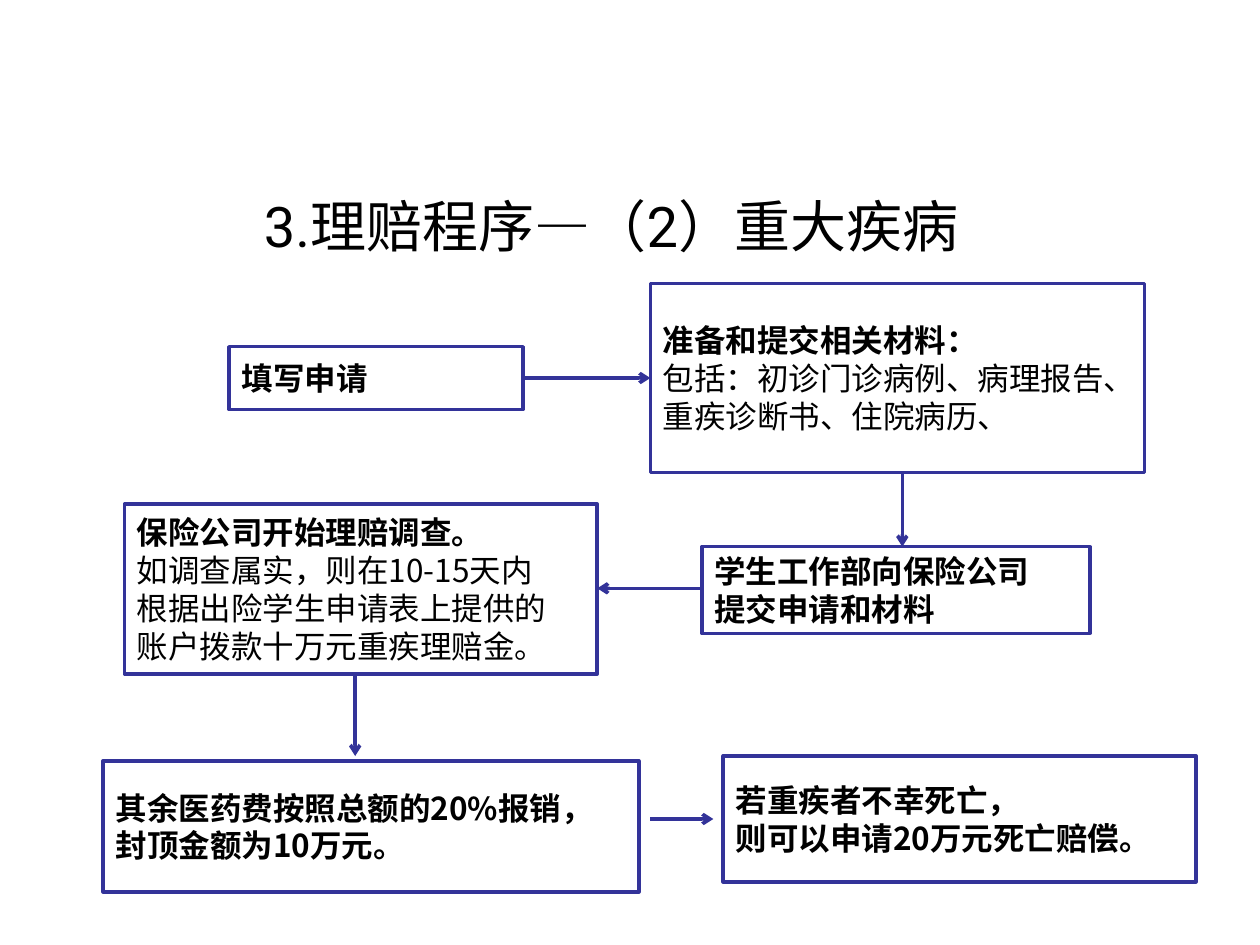
"""Build the slide on the claim procedure for serious illness."""
import pptx
import pptx.dml.color
import pptx.enum.shapes
import pptx.enum.text
import pptx.oxml
import pptx.oxml.ns
import pptx.util
from pptx.util import Cm

COLOURS = {"paper": "FFFFFF", "frame": "333399", "ink": "000000"}
TITLE_FONT = "Roboto"
STEP_FONT = "Noto Sans CJK JP"

STEPS = [
    ((4.62, 6.99, 5.92, 1.27), ["填写申请"], []),
    ((13.11, 5.72, 9.96, 3.81), ["准备和提交相关材料："],
     ["包括：初诊门诊病例、病理报告、", "重疾诊断书、住院病历、"]),
    ((14.15, 11.02, 7.82, 1.75), ["学生工作部向保险公司", "提交申请和材料"], []),
    ((2.51, 10.16, 9.53, 3.43), ["保险公司开始理赔调查。"],
     ["如调查属实，则在10-15天内", "根据出险学生申请表上提供的", "账户拨款十万元重疾理赔金。"]),
    ((14.58, 15.24, 9.53, 2.54), ["若重疾者不幸死亡，", "则可以申请20万元死亡赔偿。"], []),
    ((2.08, 15.34, 10.8, 2.64), ["其余医药费按照总额的20%报销，", "封顶金额为10万元。"], []),
]

ARROWS = [
    (10.56, 7.62, 13.11, 7.62),
    (18.19, 9.53, 18.19, 11.02),
    (14.15, 11.86, 12.04, 11.86),
    (7.16, 13.57, 7.16, 15.24),
    (13.11, 16.51, 14.38, 16.51),
]


def colour(name):
    return pptx.dml.color.RGBColor.from_string(COLOURS[name])


def add_child(parent, tag, **attributes):
    child = pptx.oxml.parse_xml(f"<{tag} {pptx.oxml.ns.nsdecls('a')}/>")
    for key, value in attributes.items():
        child.set(key, value)
    parent.append(child)


def style_paragraph(paragraph, face, size, bold=False):
    font = paragraph.font
    font.name = face
    font.size = pptx.util.Pt(size)
    font.bold = bold
    font.color.rgb = colour("ink")


def style_line(line):
    line.color.rgb = colour("frame")
    line.width = pptx.util.Pt(2)


def add_title(slide, text):
    title = slide.shapes.add_textbox(Cm(0.89), Cm(3.73), Cm(22.86), Cm(3.18))
    title.text_frame.word_wrap = True
    heading = title.text_frame.paragraphs[0]
    heading.text = text
    heading.alignment = pptx.enum.text.PP_ALIGN.CENTER
    style_paragraph(heading, TITLE_FONT, 32)


def add_step(slide, place, bold_lines, plain_lines):
    step = slide.shapes.add_shape(
        pptx.enum.shapes.MSO_SHAPE.RECTANGLE, *map(Cm, place))
    step.shadow.inherit = False
    step.fill.solid()
    step.fill.fore_color.rgb = colour("paper")
    style_line(step.line)
    frame = step.text_frame
    frame.word_wrap = False
    frame.vertical_anchor = pptx.enum.text.MSO_ANCHOR.MIDDLE
    frame.text = "\n".join(bold_lines + plain_lines)
    for index, paragraph in enumerate(frame.paragraphs):
        paragraph.alignment = pptx.enum.text.PP_ALIGN.LEFT
        style_paragraph(paragraph, STEP_FONT, 18, index < len(bold_lines))
        add_child(paragraph.font._element, "a:ea", typeface=STEP_FONT)


def add_arrow(slide, ends):
    arrow = slide.shapes.add_connector(
        pptx.enum.shapes.MSO_CONNECTOR.STRAIGHT, *map(Cm, ends))
    style_line(arrow.line)
    properties = arrow._element.spPr
    add_child(properties.find(pptx.oxml.ns.qn("a:ln")), "a:tailEnd", type="arrow")
    add_child(properties, "a:effectLst")


def main():
    presentation = pptx.Presentation()
    presentation.slide_width = Cm(25.4)
    presentation.slide_height = Cm(19.05)
    slide = presentation.slides.add_slide(presentation.slide_layouts[6])
    add_title(slide, "3.理赔程序—（2）重大疾病")
    for place, bold_lines, plain_lines in STEPS:
        add_step(slide, place, bold_lines, plain_lines)
    for ends in ARROWS:
        add_arrow(slide, ends)
    presentation.save("out.pptx")


if __name__ == "__main__":
    main()
